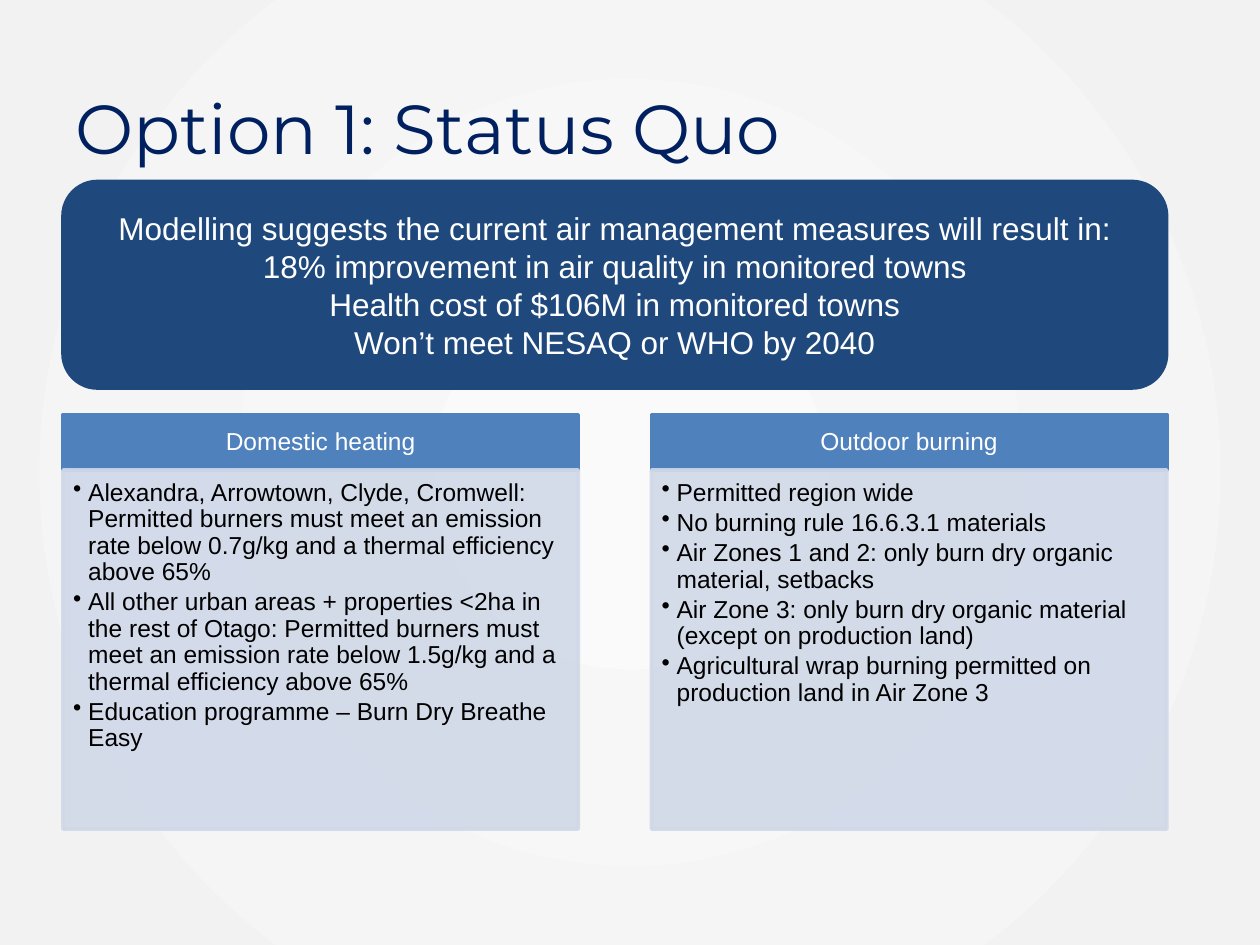
from pptx import Presentation
from pptx.dml.color import RGBColor
from pptx.enum.shapes import MSO_SHAPE as Shape
from pptx.enum.text import MSO_ANCHOR as Anchor, PP_ALIGN as Align
from pptx.oxml import parse_xml
from pptx.oxml.ns import nsdecls, qn
from pptx.util import Inches, Pt

COLORS = {
    "centre": "FAFAFA",
    "edge": "F2F2F2",
    "title": "002060",
    "summary": "1F497D",
    "header": "4F81BD",
    "panel": "D0D8E8",
    "light": "FFFFFF",
    "dark": "000000",
}

SUMMARY = [
    "Modelling suggests the current air management measures will result in: "
    "18% improvement in air quality in monitored towns",
    "Health cost of $106M in monitored towns",
    "Won’t meet NESAQ or WHO by 2040",
]

TOPICS = {
    "Domestic heating": [
        "Alexandra, Arrowtown, Clyde, Cromwell: Permitted burners must meet an "
        "emission rate below 0.7g/kg and a thermal efficiency above 65%",
        "All other urban areas + properties <2ha in the rest of Otago: Permitted "
        "burners must meet an emission rate below 1.5g/kg and a thermal "
        "efficiency above 65%",
        "Education programme – Burn Dry Breathe Easy",
    ],
    "Outdoor burning": [
        "Permitted region wide",
        "No burning rule 16.6.3.1 materials",
        "Air Zones 1 and 2: only burn dry organic material, setbacks",
        "Air Zone 3: only burn dry organic material (except on production land)",
        "Agricultural wrap burning permitted on production land in Air Zone 3",
    ],
}

LEFT = 0.5
TOPIC_WIDTH = 4.09
TOPIC_STEP = 4.67


def rgb(name):
    return RGBColor.from_string(COLORS[name])


class SlideBuilder:
    font = "Arial"
    body_size = 14

    def __init__(self, slide):
        self.slide = slide

    def background(self):
        fill = self.slide.background.fill
        fill.gradient()
        for stop, color, position in zip(fill.gradient_stops, ("centre", "edge"), (0, 1)):
            stop.color.rgb = rgb(color)
            stop.position = position
        linear = next(self.slide.element.iter(qn("a:lin")))
        radial = parse_xml(
            f'<a:path {nsdecls("a")} path="circle">'
            '<a:fillToRect l="50000" t="50000" r="50000" b="50000"/></a:path>'
        )
        linear.getparent().replace(linear, radial)

    def add_lines(self, frame, lines, size, color, align=Align.LEFT, font=font,
                  spacing=1.0, after=0, bullet=False):
        frame.word_wrap = True
        for index, line in enumerate(lines):
            paragraph = frame.add_paragraph() if index else frame.paragraphs[0]
            if bullet:
                properties = paragraph._p.get_or_add_pPr()
                properties.set("marL", str(Inches(0.12)))
                properties.set("indent", str(-Inches(0.12)))
                properties.append(parse_xml(f'<a:buChar {nsdecls("a")} char="•"/>'))
            paragraph.alignment = align
            paragraph.line_spacing = spacing
            paragraph.space_after = Pt(after)
            run = paragraph.add_run()
            run.text = line
            run.font.name = font
            run.font.size = Pt(size)
            run.font.color.rgb = rgb(color)

    def title(self, text, left, top, width, height):
        box = self.slide.shapes.add_textbox(*map(Inches, (left, top, width, height)))
        box.text_frame.vertical_anchor = Anchor.MIDDLE
        self.add_lines(box.text_frame, [text], 39.6, "title", font="Montserrat")

    def block(self, preset, color, left, top, width, height, insets, opacity=100):
        shape = self.slide.shapes.add_shape(preset, *map(Inches, (left, top, width, height)))
        shape.shadow.inherit = False
        shape.fill.solid()
        shape.fill.fore_color.rgb = rgb(color)
        shape.line.color.rgb = rgb(color)
        shape.line.width = Pt(2)
        if opacity < 100:
            for tint in shape._element.spPr.iter(qn("a:srgbClr")):
                tint.append(parse_xml(f'<a:alpha {nsdecls("a")} val="{opacity * 1000}"/>'))
        frame = shape.text_frame
        frame.margin_left, frame.margin_top, frame.margin_right, frame.margin_bottom = map(
            Inches, insets)
        frame.vertical_anchor = Anchor.MIDDLE
        return frame

    def summary(self, lines, left, top, width, height):
        frame = self.block(Shape.ROUNDED_RECTANGLE, "summary", left, top, width, height,
                           (0.1, 0.05, 0.1, 0.05))
        self.add_lines(frame, lines, 18, "light", Align.CENTER)

    def topic(self, heading, points, left, top, width):
        header_height = 0.44
        header = self.block(Shape.RECTANGLE, "header", left, top, width, header_height,
                            (0.11, 0.06, 0.11, 0.06))
        self.add_lines(header, [heading], self.body_size, "light", Align.CENTER, spacing=0.9)
        panel = self.block(Shape.RECTANGLE, "panel", left, top + header_height, width, 2.85,
                           (0.08, 0.08, 0.11, 0.12), opacity=90)
        panel.vertical_anchor = Anchor.TOP
        self.add_lines(panel, points, self.body_size, "dark", spacing=0.9, after=2.1,
                       bullet=True)


def main():
    deck = Presentation()
    deck.slide_width, deck.slide_height = Inches(10), Inches(7.5)
    builder = SlideBuilder(deck.slides.add_slide(deck.slide_layouts[6]))
    builder.background()
    builder.title("Option 1: Status Quo", LEFT, 0.73, 9.21, 0.55)
    builder.summary(SUMMARY, LEFT, 1.44, TOPIC_STEP + TOPIC_WIDTH, 1.64)
    for column, (heading, points) in enumerate(TOPICS.items()):
        builder.topic(heading, points, LEFT + column * TOPIC_STEP, 3.29, TOPIC_WIDTH)
    deck.save("out.pptx")


if __name__ == "__main__":
    main()
